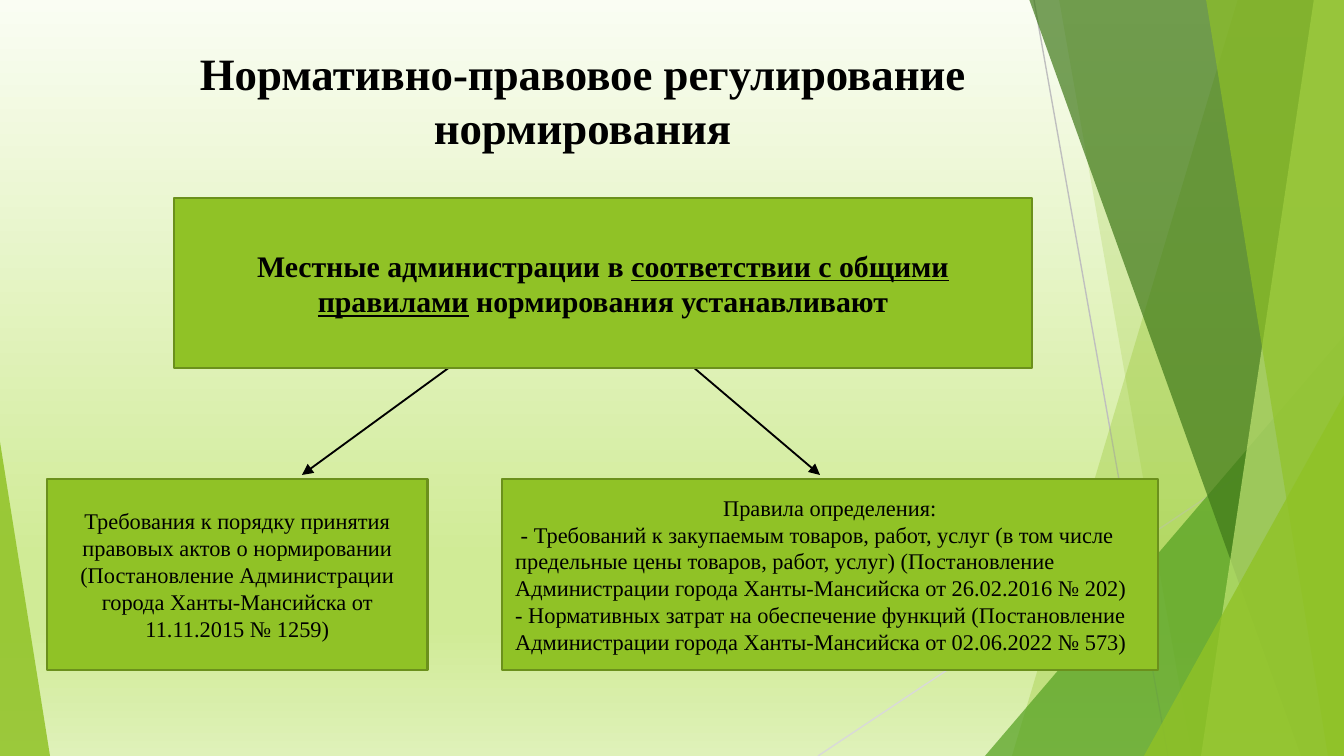
from copy import deepcopy
from pptx import Presentation
from pptx.dml.color import RGBColor
from pptx.enum.shapes import MSO_CONNECTOR, MSO_SHAPE
from pptx.enum.text import MSO_ANCHOR, PP_ALIGN
from pptx.oxml.ns import qn
from pptx.util import Emu, Pt
from lxml import etree

PX = 914400 / 134.4
W, H = 1344, 756
LINE = MSO_CONNECTOR.STRAIGHT
RECT, TRIANGLE = MSO_SHAPE.RECTANGLE, MSO_SHAPE.ISOSCELES_TRIANGLE
CENTER, LEFT = PP_ALIGN.CENTER, PP_ALIGN.LEFT
TOP, MIDDLE = MSO_ANCHOR.TOP, MSO_ANCHOR.MIDDLE
GREEN, DARK, BLACK = "90C226", "6B901C", "000000"


def paint(fmt, color, alpha=100):
    fmt.solid()
    fmt.fore_color.rgb = RGBColor.from_string(color)
    if alpha < 100:
        clr = fmt._xPr.find(".//" + qn("a:srgbClr"))
        etree.SubElement(clr, qn("a:alpha")).set("val", str(alpha * 1000))


def write(tf, paragraphs, size=12, bold=False, anchor=MIDDLE):
    tf.word_wrap = True
    tf.vertical_anchor = anchor
    for i, (align, runs) in enumerate(paragraphs):
        p = tf.paragraphs[0] if i == 0 else tf.add_paragraph()
        p.alignment = align
        for text, underline in runs:
            r = p.add_run()
            r.text = text
            r.font.name = "Times New Roman"
            r.font.size = Pt(size)
            r.font.bold = bold
            r.font.underline = underline
            paint(r.font.fill, BLACK)


prs = Presentation()
prs.slide_width, prs.slide_height = Emu(round(W * PX)), Emu(round(H * PX))
s = prs.slides.add_slide(prs.slide_layouts[6])

bg = s.background.fill
bg.gradient()
bg.gradient_angle = 270
stops = s.element.find(".//" + qn("a:gsLst"))
blank = deepcopy(stops[0])
for stop in list(stops):
    stops.remove(stop)
for pos, color in [(0, "FAFDF3"), (74, "D0EB96"), (83, "D0EB96"), (100, "DFF1B9")]:
    stop = deepcopy(blank)
    stop.set("pos", str(pos * 1000))
    for child in list(stop):
        stop.remove(child)
    etree.SubElement(stop, qn("a:srgbClr")).set("val", color)
    stops.append(stop)

lines = [
    (1034, 0, 1168, H, "BFBFBF", 0.75, False),
    (W, 406, 818, H, "D9D9D9", 0.75, False),
    (450, 367, 302, 475, BLACK, 1, True),
    (693, 367, 820, 475, BLACK, 1, True),
]
for x1, y1, x2, y2, color, width, arrow in lines:
    c = s.shapes.add_connector(LINE, *[Emu(round(v * PX)) for v in (x1, y1, x2, y2)])
    paint(c.line.fill, color)
    c.line.width = Pt(width)
    if arrow:
        etree.SubElement(c.line._get_or_add_ln(), qn("a:tailEnd")).set("type", "triangle")
    etree.SubElement(c._element.spPr, qn("a:effectLst"))

facets = [
    ("band", 1238, 1012, GREEN, 30),
    ("band", 1059, 1192, GREEN, 20),
    ("triangle", 985, 336, 359, 1, "54A021", 72),
    ("band", 1029, 1301, "3F7819", 70),
    ("band", 1314, 1201, "C0E474", 70),
    ("band", 1206, 1328, GREEN, 65),
    ("triangle", 1144, 395, 200, 1, GREEN, 80),
    ("triangle", 0, 442, 50, 0, GREEN, 85),
]
for kind, *place, color, alpha in facets:
    if kind == "band":
        top, bottom = place
        fb = s.shapes.build_freeform(top, -1, scale=PX)
        fb.add_line_segments([(W, -1), (W, H), (bottom, H)], close=True)
        sp = fb.convert_to_shape()
    else:
        x, y, w, apex = place
        sp = s.shapes.add_shape(TRIANGLE, *[Emu(round(v * PX)) for v in (x, y, w, H - y)])
        sp.adjustments[0] = apex
    sp.shadow.inherit = False
    paint(sp.fill, color, alpha)
    sp.line.fill.background()

boxes = [
    (174, 198, 858, 170, 16, True, [
        (CENTER, [("Местные администрации в ", False),
                  ("соответствии с общими правилами", True),
                  (" нормирования устанавливают", False)])]),
    (47, 479, 381, 191, 12, False, [
        (CENTER, [("Требования к порядку принятия правовых актов о нормировании "
                   "(Постановление Администрации города Ханты-Мансийска от "
                   "11.11.2015 № 1259)", False)])]),
    (502, 479, 656, 191, 12, False, [
        (CENTER, [("Правила определения:", False)]),
        (LEFT, [(" - Требований к закупаемым товаров, работ, услуг (в том числе "
                 "предельные цены товаров, работ, услуг) (Постановление Администрации "
                 "города Ханты-Мансийска от 26.02.2016 № 202)", False)]),
        (LEFT, [("- Нормативных затрат на обеспечение функций (Постановление "
                 "Администрации города Ханты-Мансийска от 02.06.2022 № 573)", False)])]),
]
for x, y, w, h, size, bold, paragraphs in boxes:
    sp = s.shapes.add_shape(RECT, *[Emu(round(v * PX)) for v in (x, y, w, h)])
    sp.shadow.inherit = False
    paint(sp.fill, GREEN)
    paint(sp.line.fill, DARK)
    sp.line.width = Pt(1.5)
    write(sp.text_frame, paragraphs, size, bold)

title = s.shapes.add_textbox(*[Emu(round(v * PX)) for v in (101, 39, 963, 132)])
write(title.text_frame, [(CENTER, [("Нормативно-правовое регулирование нормирования", False)])],
      24, True, TOP)

prs.save("out.pptx")
